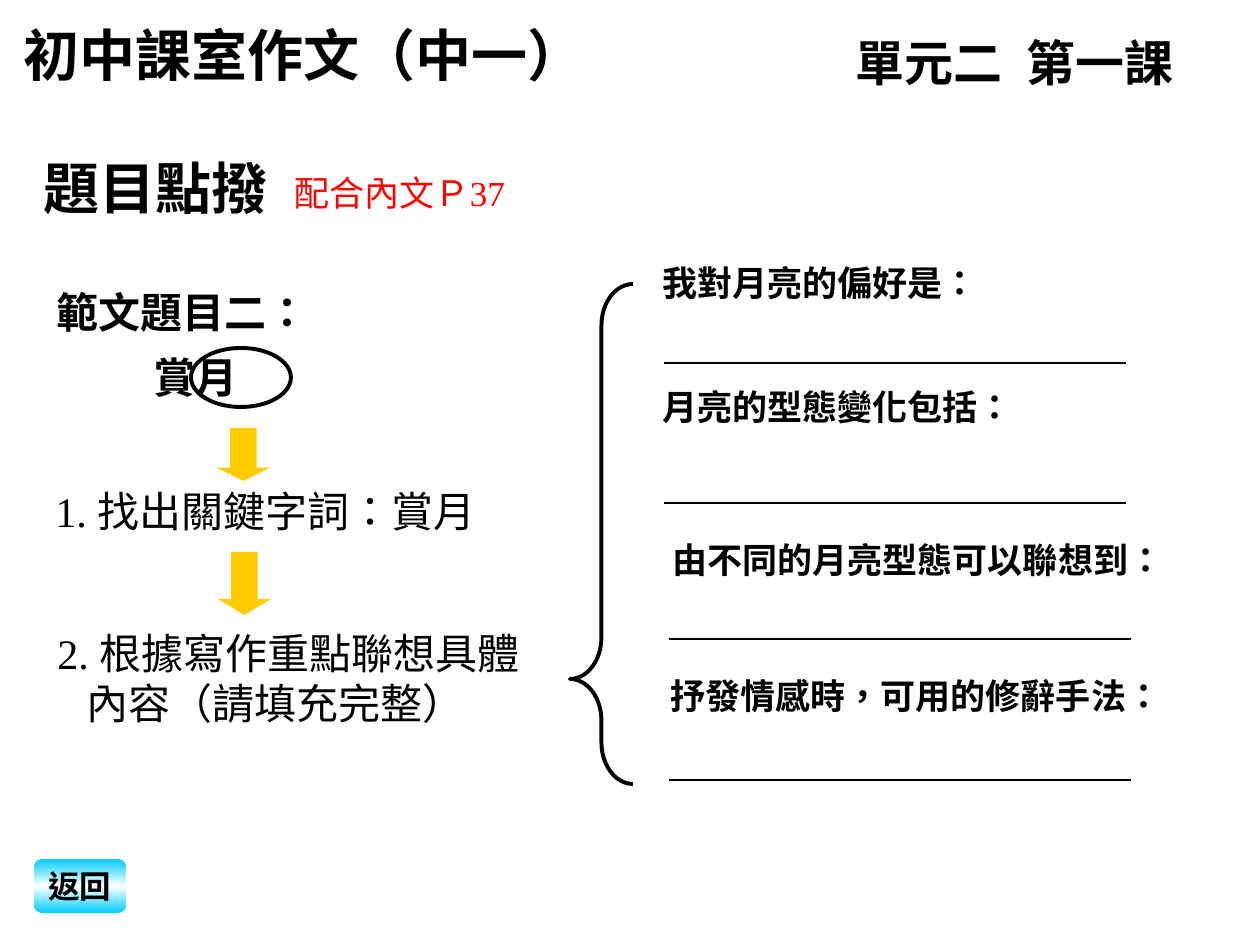
import copy

import pptx
import pptx.dml.color
import pptx.enum.lang
import pptx.enum.shapes
import pptx.enum.text
import pptx.oxml
import pptx.oxml.ns
import pptx.util

RGBColor = pptx.dml.color.RGBColor
MSO = pptx.enum.shapes.MSO_SHAPE
ALIGN = pptx.enum.text.PP_ALIGN
BLACK = RGBColor(0, 0, 0)
WHITE = RGBColor(255, 255, 255)
RED = RGBColor(255, 0, 0)
GOLD = RGBColor(255, 204, 0)
CYAN = RGBColor(0, 204, 255)
SERIF, SANS, TITLE, HEAD = "Times New Roman", "DejaVu Sans", "Karla", "Arial"
EAST_ASIAN = {SERIF: SANS}

HEADINGS = [
    ("初中課室作文（中一）", (11, 14, 658, 79), dict(size=32, font=TITLE, bold=True)),
    ("單元二  第一課", (843, 26, 422, 72), dict(size=28, font=TITLE, bold=True)),
    ("題目點撥", (31, 147, 388, 79), dict(size=32, font=HEAD, bold=True)),
    ("配合內文Ｐ37", (282, 165, 311, 54), dict(size=20, font=SERIF, color=RED)),
]
STEPS = [
    ([("範文題目二：", SANS)], [("賞月", SANS)], (44, 265, 630, 144),
     dict(bold=True, spacing=1.3, indent=97)),
    ([("1. ", SERIF), ("找出關鍵字詞：賞月", SANS)], None, (43, 479, 514, 63), {}),
    ([("2. ", SERIF), ("根據寫作重點聯想具體", SANS)], [("內容（請填充完整）", SANS)],
     (45, 621, 525, 113), dict(indent=29)),
]
QUESTIONS = [
    ("我對月亮的偏好是：", SERIF, (650, 255), (664, 363)),
    ("月亮的型態變化包括：", SERIF, (650, 379), (664, 503)),
    ("由不同的月亮型態可以聯想到：", SANS, (660, 532), (669, 639)),
    ("抒發情感時，可用的修辭手法：", SANS, (658, 668), (669, 780)),
]
QUESTION_SIZE = (525, 54)
BLANK_WIDTH = 462
ARROWS = [((217, 428, 53, 53), 0.25), ((218, 552, 53, 63), 0.3)]


def px(n):
    return round(n * 914400 / 126)


def write(tf, paragraphs, size=24, font=SANS, color=BLACK, bold=False, spacing=None,
          indent=0, align=ALIGN.LEFT, wrap=True):
    tf.word_wrap = wrap
    if isinstance(paragraphs, str):
        paragraphs = [[(paragraphs, font)]]
    for i, runs in enumerate(paragraphs):
        p = tf.add_paragraph() if i else tf.paragraphs[0]
        p.alignment = align
        if spacing:
            p.line_spacing = spacing
        if i and indent:
            p._p.get_or_add_pPr().set("marL", str(px(indent)))
        for text, name in runs:
            r = p.add_run()
            r.text = text
            r.font.size = pptx.util.Pt(size)
            r.font.bold = bold
            r.font.color.rgb = color
            r.font.name = name
            r.font.language_id = pptx.enum.lang.MSO_LANGUAGE_ID.TRADITIONAL_CHINESE
            ea = copy.deepcopy(r.font._element.find(pptx.oxml.ns.qn("a:latin")))
            ea.tag = pptx.oxml.ns.qn("a:ea")
            ea.set("typeface", EAST_ASIAN.get(name, name))
            r.font._element.append(ea)


def add_text(s, paragraphs, box, **style):
    tf = s.shapes.add_textbox(*map(px, box)).text_frame
    tf.auto_size = pptx.enum.text.MSO_AUTO_SIZE.SHAPE_TO_FIT_TEXT
    write(tf, paragraphs, **style)


def add_shape(s, kind, box, fill=None, line=None, adjustments=()):
    sp = s.shapes.add_shape(kind, *map(px, box))
    sp.shadow.inherit = False
    for i, value in enumerate(adjustments):
        sp.adjustments[i] = value
    if fill:
        sp.fill.solid()
        sp.fill.fore_color.rgb = fill
    else:
        sp.fill.background()
    if line:
        sp.line.color.rgb = line
        sp.line.width = pptx.util.Pt(2.25)
    else:
        sp.line.fill.background()
    return sp


def add_blank(s, x, y):
    c = s.shapes.add_connector(pptx.enum.shapes.MSO_CONNECTOR.STRAIGHT,
                               px(x), px(y), px(x + BLANK_WIDTH), px(y))
    c.line.color.rgb = BLACK
    c.line.width = pptx.util.Pt(0.75)
    c._element.spPr.append(pptx.oxml.parse_xml(
        "<a:effectLst %s/>" % pptx.oxml.ns.nsdecls("a")))


def add_button(s):
    sp = add_shape(s, MSO.FLOWCHART_ALTERNATE_PROCESS, (34, 859, 92, 54))
    sp.fill.gradient()
    sp.fill.gradient_angle = 90
    first = sp.fill.gradient_stops[0]._gs
    first.addnext(copy.deepcopy(first))
    for stop, position, color in zip(sp.fill.gradient_stops, (0, 0.5, 1), (CYAN, WHITE, CYAN)):
        stop.position = position
        stop.color.rgb = color
    tf = sp.text_frame
    tf.margin_left = tf.margin_right = tf.margin_top = tf.margin_bottom = 0
    tf.vertical_anchor = pptx.enum.text.MSO_ANCHOR.MIDDLE
    write(tf, "返回", size=18, font=HEAD, bold=True, align=ALIGN.CENTER, wrap=False)


def main():
    prs = pptx.Presentation()
    prs.slide_width, prs.slide_height = px(1260), px(945)
    s = prs.slides.add_slide(prs.slide_layouts[6])
    for text, box, style in HEADINGS:
        add_text(s, text, box, **style)
    for first, second, box, style in STEPS:
        add_text(s, [runs for runs in (first, second) if runs], box, **style)
    add_shape(s, MSO.OVAL, (191, 348, 100, 59), line=BLACK)
    for box, head in ARROWS:
        add_shape(s, MSO.DOWN_ARROW, box, fill=GOLD, adjustments=(0.5, head))
    add_shape(s, MSO.LEFT_BRACE, (570, 284, 63, 500), line=BLACK, adjustments=(0.66, 0.79))
    for text, font, corner, blank in QUESTIONS:
        add_text(s, text, corner + QUESTION_SIZE, size=20, font=font, bold=True)
        add_blank(s, *blank)
    add_button(s)
    prs.save("out.pptx")


if __name__ == "__main__":
    main()
